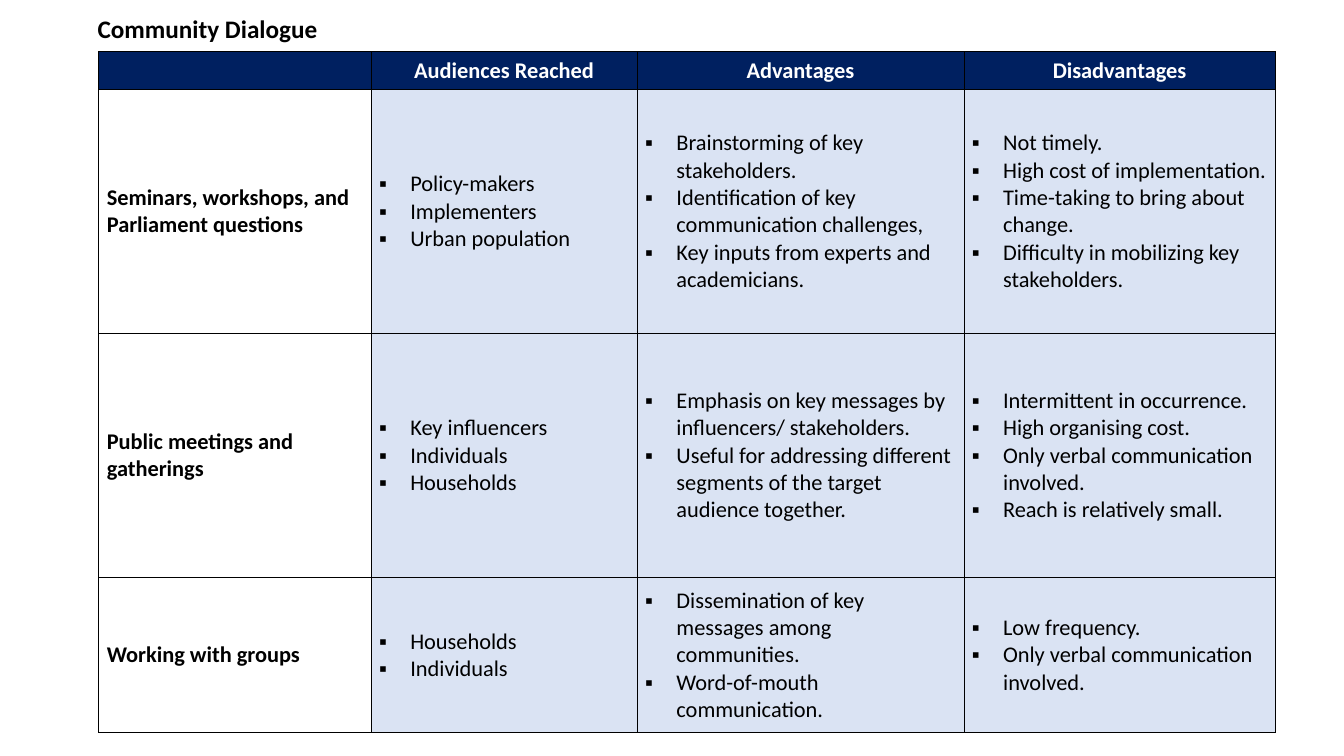
from lxml import etree
from pptx import Presentation
from pptx import util as u
from pptx.dml.color import RGBColor
from pptx.enum import text
from pptx.oxml.ns import qn

PX = 9144
FONT = "Calibri"
NAVY, PALE, BLACK, WHITE = "002060", "DAE3F3", "000000", "FFFFFF"

COLUMN_WIDTHS = [270, 264, 324, 309]
ROW_HEIGHTS = [38, 242, 242, 154]
HEADINGS = ["", "Audiences Reached", "Advantages", "Disadvantages"]
METHODS = [
    ("Seminars, workshops, and Parliament questions",
     ["Policy-makers", "Implementers", "Urban population"],
     ["Brainstorming of key stakeholders.",
      "Identification of key communication challenges,",
      "Key inputs from experts and academicians."],
     ["Not timely.", "High cost of implementation.",
      "Time-taking to bring about change.",
      "Difficulty in mobilizing key stakeholders."]),
    ("Public meetings and gatherings",
     ["Key influencers", "Individuals", "Households"],
     ["Emphasis on key messages by influencers/ stakeholders.",
      "Useful for addressing different segments of the target audience together."],
     ["Intermittent in occurrence.", "High organising cost.",
      "Only verbal communication involved.", "Reach is relatively small."]),
    ("Working with groups",
     ["Households", "Individuals"],
     ["Dissemination of key messages among communities.",
      "Word-of-mouth communication."],
     ["Low frequency.", "Only verbal communication involved."]),
]


def px(length):
    return u.Emu(length * PX)


def color(hex_code):
    return RGBColor.from_string(hex_code)


def add_bullet(paragraph):
    properties = paragraph._p.get_or_add_pPr()
    properties.set("marL", str(px(31)))
    properties.set("indent", str(-px(31)))
    etree.SubElement(properties, qn("a:buFont"), typeface="Arial")
    etree.SubElement(properties, qn("a:buChar"), char="▪")


def write(frame, lines, size=16, ink=BLACK, bold=False, align=text.PP_ALIGN.LEFT, bullets=False):
    for index, line in enumerate(lines):
        paragraph = frame.add_paragraph() if index else frame.paragraphs[0]
        paragraph.alignment = align
        if bullets:
            add_bullet(paragraph)
        run = paragraph.add_run()
        run.text = line
        run.font.name = FONT
        run.font.size = u.Pt(size)
        run.font.bold = bold
        run.font.color.rgb = color(ink)


def add_borders(cell):
    properties = cell._tc.get_or_add_tcPr()
    for side in ("lnL", "lnR", "lnT", "lnB"):
        border = etree.SubElement(properties, qn(f"a:{side}"), w=str(u.Pt(0.5)))
        fill = etree.SubElement(border, qn("a:solidFill"))
        etree.SubElement(fill, qn("a:srgbClr"), val=BLACK)


def fill_cell(cell, lines, background=None, inset=(8, 4), **style):
    add_borders(cell)
    if background:
        cell.fill.solid()
        cell.fill.fore_color.rgb = color(background)
    else:
        cell.fill.background()
    cell.margin_left = cell.margin_right = px(inset[0])
    cell.margin_top = cell.margin_bottom = px(inset[1])
    cell.vertical_anchor = text.MSO_ANCHOR.MIDDLE
    write(cell.text_frame, lines, **style)


def add_title(slide, title):
    frame = slide.shapes.add_textbox(px(87), px(8), px(240), px(40)).text_frame
    frame.word_wrap = False
    frame.auto_size = text.MSO_AUTO_SIZE.SHAPE_TO_FIT_TEXT
    write(frame, [title], size=18, bold=True)


def add_comparison(slide):
    comparison = slide.shapes.add_table(
        len(ROW_HEIGHTS), len(COLUMN_WIDTHS), px(98), px(51),
        px(sum(COLUMN_WIDTHS)), px(sum(ROW_HEIGHTS))).table
    comparison.first_row = False
    comparison.horz_banding = False
    for column, width in zip(comparison.columns, COLUMN_WIDTHS):
        column.width = px(width)
    for row, height in zip(comparison.rows, ROW_HEIGHTS):
        row.height = px(height)
    for column, heading in enumerate(HEADINGS):
        fill_cell(comparison.cell(0, column), [heading], NAVY, inset=(3, 1),
                  ink=WHITE, bold=True, align=text.PP_ALIGN.CENTER)
    for row, (method, *details) in enumerate(METHODS, 1):
        fill_cell(comparison.cell(row, 0), [method], bold=True)
        for column, points in enumerate(details, 1):
            fill_cell(comparison.cell(row, column), points, PALE, bullets=True)


def main():
    deck = Presentation()
    deck.slide_width, deck.slide_height = px(1333), px(750)
    slide = deck.slides.add_slide(deck.slide_layouts[6])
    add_comparison(slide)
    add_title(slide, "Community Dialogue")
    deck.save("out.pptx")


if __name__ == "__main__":
    main()
